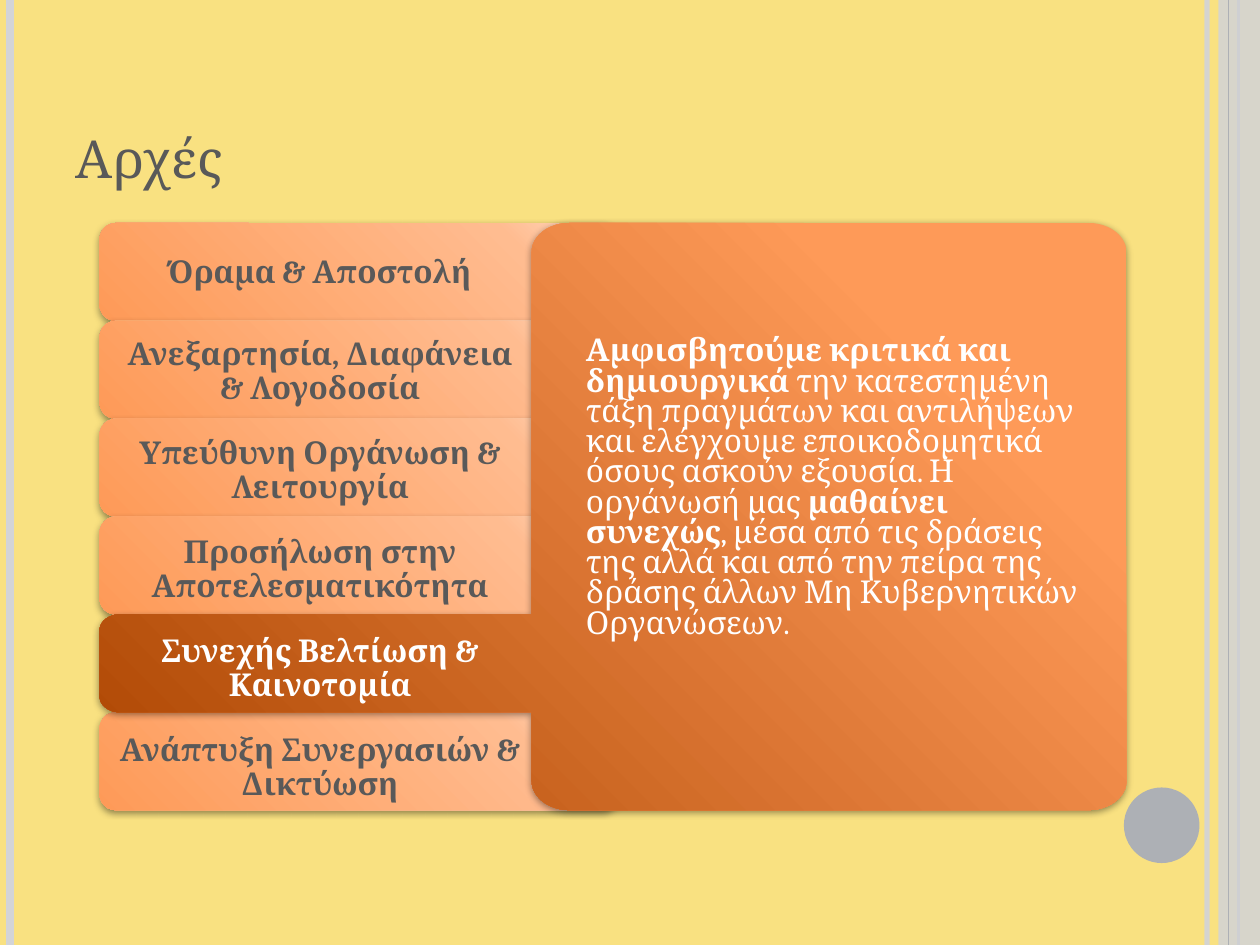
from dataclasses import dataclass
from math import cos, pi, sin

from lxml import etree
from pptx import Presentation
from pptx.dml.color import RGBColor
from pptx.enum import shapes as s, text as t
from pptx.oxml import ns, parse_xml
from pptx.util import Inches, Pt


@dataclass(frozen=True)
class Theme:
    font: str = "Cambria"
    background: str = "F9E181"
    dark: str = "595959"
    white: str = "FFFFFF"
    grey: str = "ADB0B5"
    light_grey: str = "D3D4D7"
    row_stops: tuple = ((0, "FE9A58"), (80, "FFBC90"), (100, "FFDDC7"))
    active_stops: tuple = ((0, "AC4501"), (80, "FE9A58"), (100, "FE9A58"))
    title_size: int = 30
    body_size: int = 18


THEME = Theme()
PRINCIPLES = [
    "Όραμα & Αποστολή",
    "Ανεξαρτησία, Διαφάνεια & Λογοδοσία",
    "Υπεύθυνη Οργάνωση & Λειτουργία",
    "Προσήλωση στην Αποτελεσματικότητα",
    "Συνεχής Βελτίωση & Καινοτομία",
    "Ανάπτυξη Συνεργασιών & Δικτύωση",
]
ACTIVE = 4
EXPLANATION = [
    ("Αμφισβητούμε κριτικά και δημιουργικά ", True),
    ("την κατεστημένη τάξη πραγμάτων και αντιλήψεων και ελέγχουμε "
     "εποικοδομητικά όσους ασκούν εξουσία. Η οργάνωσή μας ", False),
    ("μαθαίνει συνεχώς", True),
    (", μέσα από τις δράσεις της αλλά και από την πείρα της δράσης άλλων "
     "Μη Κυβερνητικών Οργανώσεων.", False),
]


def rgb(color):
    return RGBColor.from_string(color)


def set_alpha(fill_owner, percent):
    """Make the solid colour inside an element partly transparent."""
    color = next(fill_owner.iter(ns.qn("a:srgbClr")))
    etree.SubElement(color, ns.qn("a:alpha"), val=str(percent * 1000))


def add_bar(slide, x, height, color, width, alpha=100):
    bar = slide.shapes.add_connector(
        s.MSO_CONNECTOR.STRAIGHT, Inches(x), 0, Inches(x), Inches(height))
    bar.line.color.rgb = rgb(color)
    bar.line.width = Pt(width)
    properties = bar._element.spPr
    if alpha < 100:
        set_alpha(properties, alpha)
    etree.SubElement(properties, ns.qn("a:effectLst"))


def add_plain(slide, kind, box, color):
    shape = slide.shapes.add_shape(kind, *map(Inches, box))
    shape.shadow.inherit = False
    shape.fill.solid()
    shape.fill.fore_color.rgb = rgb(color)
    shape.line.fill.background()
    return shape


def add_decoration(slide, width, height):
    add_bar(slide, width - 0.42, height, THEME.light_grey, 3, alpha=93)
    add_bar(slide, 0.08, height, THEME.light_grey, 4.5)
    add_bar(slide, width - 0.17, height, THEME.grey, 1.5)
    band = add_plain(slide, s.MSO_SHAPE.RECTANGLE,
                     (width - 0.33, 0, 0.33, height), THEME.light_grey)
    set_alpha(band._element.spPr, 87)
    add_bar(slide, width - 0.25, height, THEME.grey, 0.75)
    add_plain(slide, s.MSO_SHAPE.OVAL, (8.92, 6.25, 0.6, 0.6), THEME.grey)


def style_glow(shape, stops):
    """Fill a shape from its bottom left corner outwards and drop a soft shadow."""
    shape.line.fill.background()
    shape.fill.background()
    shape.shadow.inherit = False
    properties = shape._element.spPr
    stop_list = "".join(
        f'<a:gs pos="{pos * 1000}"><a:srgbClr val="{color}"/></a:gs>'
        for pos, color in stops)
    gradient = parse_xml(
        f'<a:gradFill {ns.nsdecls("a")} rotWithShape="1"><a:gsLst>{stop_list}</a:gsLst>'
        '<a:path path="circle"><a:fillToRect t="100000" r="100000"/></a:path>'
        '</a:gradFill>')
    properties.replace(properties.find(ns.qn("a:noFill")), gradient)
    properties.find(ns.qn("a:effectLst")).append(parse_xml(
        f'<a:outerShdw {ns.nsdecls("a")} blurRad="{Pt(4)}" dist="{Pt(1.6)}" '
        'dir="5400000" rotWithShape="0"><a:srgbClr val="000000">'
        '<a:alpha val="42000"/></a:srgbClr></a:outerShdw>'))


def corner(cx, cy, rx, ry, start, steps=12):
    """Points of a clockwise quarter ellipse that starts at the given degrees."""
    angles = [start * pi / 180 + pi / 2 * i / steps for i in range(steps + 1)]
    return [(cx + rx * cos(a), cy + ry * sin(a)) for a in angles]


def add_active_panel(slide, box, panel_left, tab_top, tab_height):
    """Draw the panel and its tab on the left as a single outline."""
    left, top, width, height = box
    right, bottom, tab_bottom = left + width, top + height, tab_top + tab_height
    rx, ry, tab_rx, tab_ry = 0.3, 0.23, 0.16, 0.13
    points = [
        *corner(right - rx, top + ry, rx, ry, 270),
        *corner(right - rx, bottom - ry, rx, ry, 0),
        *corner(panel_left + rx, bottom - ry, rx, ry, 90),
        (panel_left, tab_bottom),
        *corner(left + tab_rx, tab_bottom - tab_ry, tab_rx, tab_ry, 90),
        *corner(left + tab_rx, tab_top + tab_ry, tab_rx, tab_ry, 180),
        (panel_left, tab_top),
        *corner(panel_left + rx, top + ry, rx, ry, 180),
    ]
    points = [(Inches(x), Inches(y)) for x, y in points]
    outline = slide.shapes.build_freeform(*points[0])
    outline.add_line_segments(points[1:], close=True)
    style_glow(outline.convert_to_shape(), THEME.active_stops)


def add_text(slide, box, runs, color, size, anchor, padded=True):
    """Write one paragraph of (wording, bold) runs and return it."""
    frame = slide.shapes.add_textbox(*map(Inches, box)).text_frame
    frame.word_wrap = True
    frame.vertical_anchor = anchor
    if padded:
        frame.margin_left = frame.margin_right = frame.margin_top = Inches(0.16)
        frame.margin_bottom = Inches(0.08)
    paragraph = frame.paragraphs[0]
    paragraph.font.name = THEME.font
    paragraph.font.size = Pt(size)
    paragraph.font.color.rgb = rgb(color)
    for wording, bold in runs:
        run = paragraph.add_run()
        run.text = wording
        run.font.bold = bold
    return paragraph


def add_principles(slide, box):
    left, top, width, height = box
    row_height = height / len(PRINCIPLES)
    for i in range(len(PRINCIPLES)):
        if i != ACTIVE:
            row = slide.shapes.add_shape(
                s.MSO_SHAPE.ROUNDED_RECTANGLE, Inches(left),
                Inches(top + i * row_height), Inches(4.11), Inches(row_height))
            style_glow(row, THEME.row_stops)
    add_active_panel(slide, box, left + 3.43, top + ACTIVE * row_height, row_height)

    for i, principle in enumerate(PRINCIPLES):
        label = add_text(
            slide, (left, top - 0.03 + i * 0.786, 3.5, row_height),
            [(principle, True)], THEME.white if i == ACTIVE else THEME.dark,
            THEME.body_size, t.MSO_ANCHOR.MIDDLE)
        label.alignment = t.PP_ALIGN.CENTER
        label.line_spacing = 0.9
    explanation = add_text(
        slide, (left + 3.7, top + 0.75, 4.25, 2.93), EXPLANATION,
        THEME.white, THEME.body_size, t.MSO_ANCHOR.TOP)
    explanation.line_spacing = 0.8


def main():
    deck = Presentation()
    deck.slide_width, deck.slide_height = Inches(10), Inches(7.5)
    slide = deck.slides.add_slide(deck.slide_layouts[6])
    slide.background.fill.solid()
    slide.background.fill.fore_color.rgb = rgb(THEME.background)
    add_decoration(slide, 10, 7.5)
    add_principles(slide, (0.79, 1.77, 8.15, 4.66))
    add_text(slide, (0.5, 0.3, 8.17, 1.25), [("Αρχές", False)], THEME.dark,
             THEME.title_size, t.MSO_ANCHOR.BOTTOM, padded=False)
    deck.save("out.pptx")


if __name__ == "__main__":
    main()
